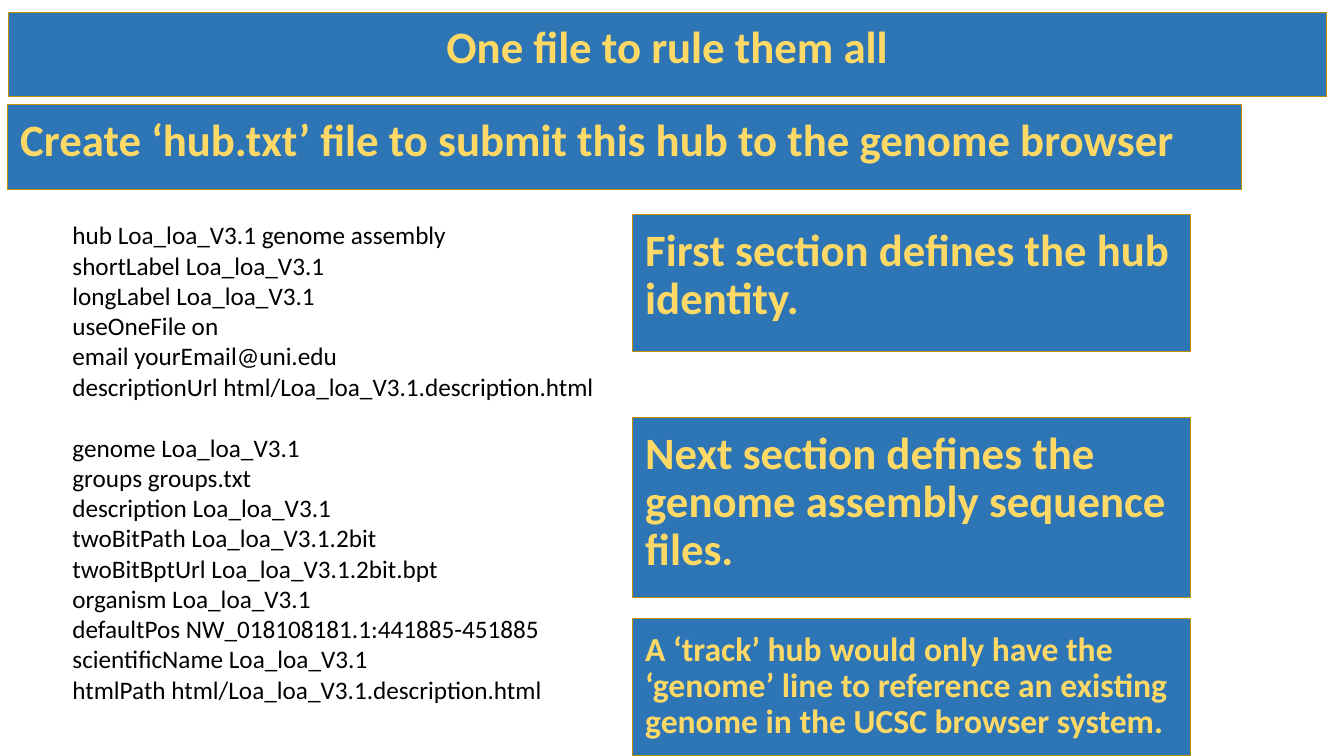
from pptx import Presentation
from pptx import util as u
from pptx.dml.color import RGBColor
from pptx.enum import shapes, text

BLUE, GOLD, YELLOW, BLACK = "2E75B6", "BF9000", "FFD966", "000000"


def color(value):
    return RGBColor.from_string(value)


def format_banner(banner, wording, size, align):
    """Fill a blue banner with bold yellow text set from its top edge."""
    banner.fill.solid()
    banner.fill.fore_color.rgb = color(BLUE)
    banner.line.color.rgb = color(GOLD)
    banner.line.width = u.Pt(0.75)
    frame = banner.text_frame
    frame_format = {"word_wrap": True, "auto_size": text.MSO_AUTO_SIZE.NONE,
                    "vertical_anchor": text.MSO_ANCHOR.TOP}
    for side in ("left", "top", "right", "bottom"):
        frame_format["margin_" + side] = u.Inches(0.13)
    for name, value in frame_format.items():
        setattr(frame, name, value)
    frame.text = wording
    para = frame.paragraphs[0]
    for name, value in {"alignment": align, "line_spacing": 0.9,
                        "space_before": u.Pt(0), "space_after": u.Pt(21.3)}.items():
        setattr(para, name, value)
    for name, value in {"name": "Calibri", "size": u.Pt(size), "bold": True}.items():
        setattr(para.font, name, value)
    para.font.color.rgb = color(YELLOW)


deck = Presentation()
deck.slide_width, deck.slide_height = u.Inches(13.33), u.Inches(7.5)
page = deck.slides.add_slide(deck.slide_layouts[5])

# Title bar
title = page.shapes.title
for name, value in {"left": 0.08, "top": 0.12, "width": 13.08, "height": 0.84}.items():
    setattr(title, name, u.Inches(value))
format_banner(title, "One file to rule them all", 32, text.PP_ALIGN.CENTER)

# Subtitle bar and the notes beside the file
banners = [
    (0.07, 1.04, 12.24, 0.84, 32,
     "Create ‘hub.txt’ file to submit this hub to the genome browser"),
    (6.27, 2.13, 5.54, 1.36, 32, "First section defines the hub identity."),
    (6.27, 4.14, 5.54, 1.79, 32,
     "Next section defines the genome assembly sequence files."),
    (6.27, 6.14, 5.54, 1.36, 24,
     "A ‘track’ hub would only have the ‘genome’ line to reference an existing "
     "genome in the UCSC browser system."),
]
for left, top, width, height, size, wording in banners:
    banner = page.shapes.add_shape(
        shapes.MSO_SHAPE.RECTANGLE,
        u.Inches(left), u.Inches(top), u.Inches(width), u.Inches(height))
    banner.shadow.inherit = False
    format_banner(banner, wording, size, text.PP_ALIGN.LEFT)

# Contents of hub.txt, one list per section
sections = [
    ["hub Loa_loa_V3.1 genome assembly",
     "shortLabel Loa_loa_V3.1",
     "longLabel Loa_loa_V3.1",
     "useOneFile on",
     "email yourEmail@uni.edu",
     "descriptionUrl html/Loa_loa_V3.1.description.html"],
    ["genome Loa_loa_V3.1",
     "groups groups.txt",
     "description Loa_loa_V3.1",
     "twoBitPath Loa_loa_V3.1.2bit",
     "twoBitBptUrl Loa_loa_V3.1.2bit.bpt",
     "organism Loa_loa_V3.1",
     "defaultPos NW_018108181.1:441885-451885",
     "scientificName Loa_loa_V3.1",
     "htmlPath html/Loa_loa_V3.1.description.html"],
]
box = page.shapes.add_textbox(
    u.Inches(0.62), u.Inches(2.13), u.Inches(5.43), u.Inches(4.95))
frame = box.text_frame
frame.word_wrap = False
frame.auto_size = text.MSO_AUTO_SIZE.SHAPE_TO_FIT_TEXT
frame.text = "\n".join(line for section in sections for line in section)
for para in frame.paragraphs:
    para.font.name = "Calibri"
    para.font.size = u.Pt(18)
    para.font.color.rgb = color(BLACK)
frame.paragraphs[len(sections[0])].space_before = u.Pt(22)

deck.save("out.pptx")
